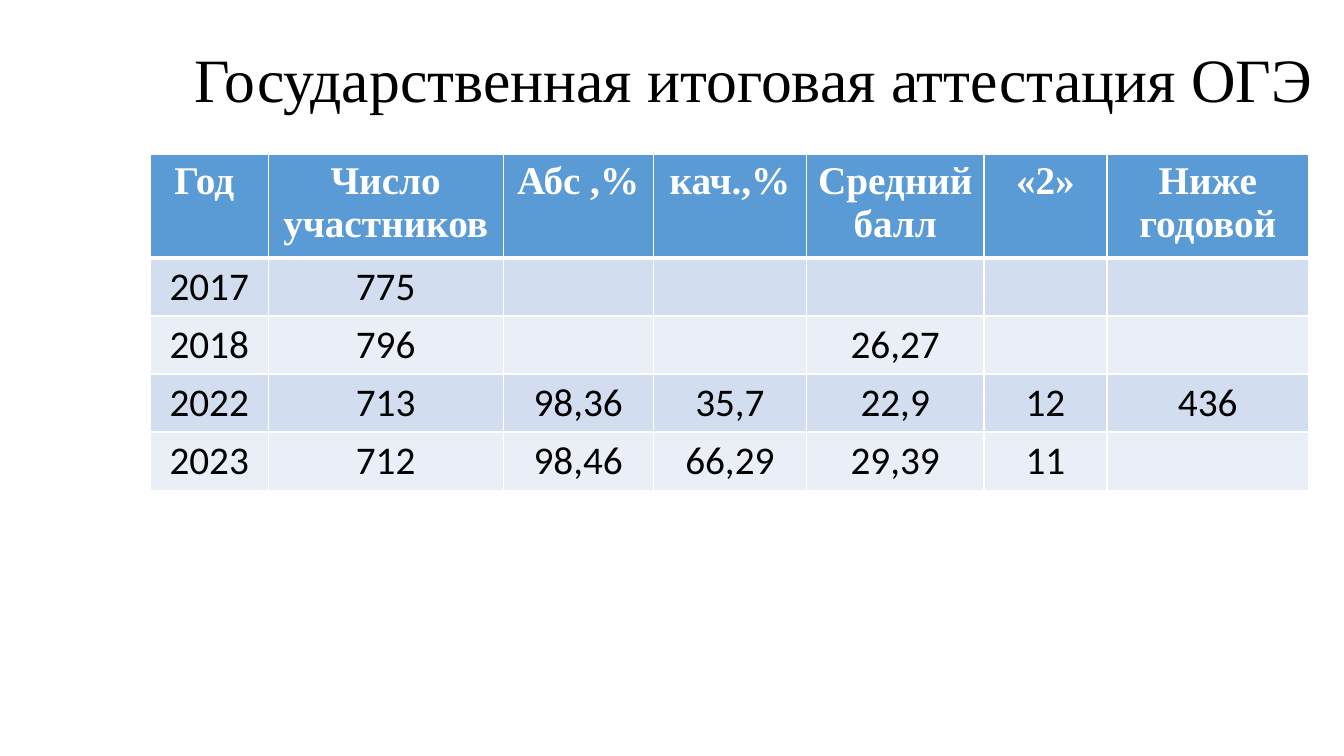
from lxml import etree
from pptx import Presentation
from pptx.dml.color import RGBColor
from pptx.enum.text import MSO_ANCHOR, PP_ALIGN
from pptx.oxml.ns import qn
from pptx.util import Inches, Pt

LEFT, MID = PP_ALIGN.LEFT, PP_ALIGN.CENTER
CENTRE = MSO_ANCHOR.MIDDLE
BLACK = RGBColor(0x00, 0x00, 0x00)
WHITE = RGBColor(0xFF, 0xFF, 0xFF)
BLUE = RGBColor(0x5B, 0x9B, 0xD5)
BANDS = RGBColor(0xD2, 0xDE, 0xEF), RGBColor(0xEA, 0xEF, 0xF7)
SERIF, SANS = "Times New Roman", "Calibri"

COLS = [1.17, 2.33, 1.49, 1.52, 1.76, 1.22, 2]
HEAD, ROW = 1.03, 0.57
DATA = [
    ["Год ", "Число участников", "Абс ,%", "кач.,%", "Средний балл", "«2»", "Ниже годовой"],
    ["2017", "775", "", "", "", "", ""],
    ["2018", "796", "", "", "26,27", "", ""],
    ["2022", "713", "98,36", "35,7", "22,9", "12", "436"],
    ["2023", "712", "98,46", "66,29", "29,39", "11", ""],
]


def write(frame, text, size=28, font=SANS, color=BLACK, bold=False, align=MID):
    par = frame.paragraphs[0]
    par.alignment = align
    par.font.size = Pt(size)
    if text:
        run = par.add_run()
        run.text = text
        run.font.name = font
        run.font.size = Pt(size)
        run.font.bold = bold
        run.font.color.rgb = color
    return par


def edge(cell, **sides):
    props = cell._tc.get_or_add_tcPr()
    for side, width in sides.items():
        line = etree.SubElement(props, qn(f"a:ln{side}"), w=str(Pt(width)))
        fill = etree.SubElement(line, qn("a:solidFill"))
        etree.SubElement(fill, qn("a:srgbClr"), val=str(WHITE))


def title(slide, box, text):
    shape = slide.shapes.title
    shape.left, shape.top, shape.width, shape.height = map(Inches, box)
    frame = shape.text_frame
    frame.word_wrap = True
    frame.vertical_anchor = CENTRE
    par = write(frame, text, size=44, font=SERIF, align=LEFT)
    par.line_spacing = 0.9


def results(slide, left, top):
    high = HEAD + ROW * (len(DATA) - 1)
    box = map(Inches, (left, top, sum(COLS), high))
    table = slide.shapes.add_table(len(DATA), len(COLS), *box).table
    for col, width in zip(table.columns, COLS):
        col.width = Inches(width)
    for r, values in enumerate(DATA):
        table.rows[r].height = Inches(ROW if r else HEAD)
        for c, text in enumerate(values):
            cell = table.cell(r, c)
            edge(cell, L=1, R=1, T=3 if r == 1 else 1, B=1 if r else 3)
            cell.fill.solid()
            if r:
                cell.fill.fore_color.rgb = BANDS[(r - 1) % 2]
                write(cell.text_frame, text)
            else:
                cell.fill.fore_color.rgb = BLUE
                write(cell.text_frame, text, font=SERIF, color=WHITE, bold=True)


def main():
    deck = Presentation()
    deck.slide_width, deck.slide_height = Inches(13.33), Inches(7.5)
    slide = deck.slides.add_slide(deck.slide_layouts[5])
    title(slide, (1.83, 0.09, 11.5, 1.45), "Государственная итоговая аттестация ОГЭ")
    results(slide, 1.49, 1.53)
    deck.save("out.pptx")


if __name__ == "__main__":
    main()
